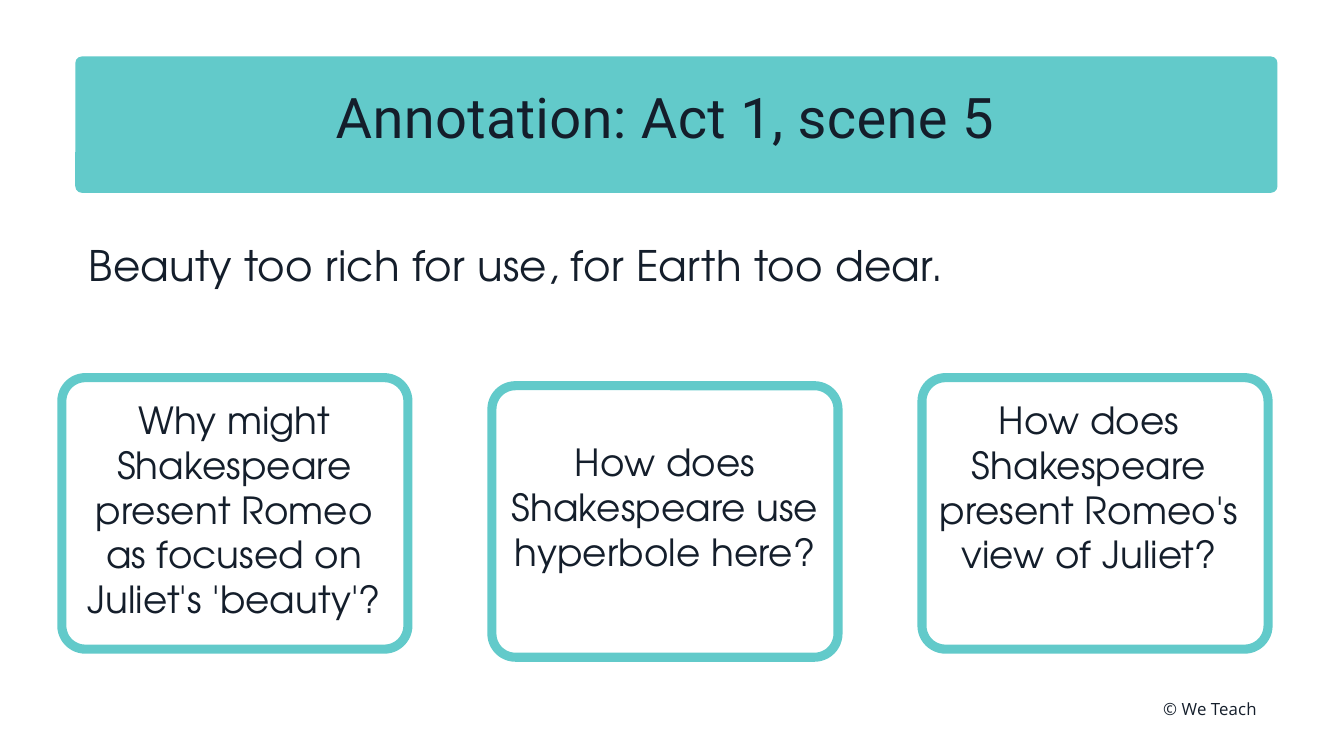
from pptx import Presentation
from pptx.dml.color import RGBColor
from pptx.enum.shapes import MSO_SHAPE as Shape
from pptx.enum.text import MSO_ANCHOR as Anchor, PP_ALIGN as Align
from pptx.util import Inches, Pt

COLORS = {"teal": "62CACA", "ink": "141E2B"}
BODY_FONT = "TeX Gyre Adventor"

CARD_LEFT, CARD_PITCH = 0.92, 6.4
CARD_WIDTH, CARD_HEIGHT = 5.15, 4.04
QUESTION_WIDTH = 4.66

# Question, card top, text left offset, text top, text height
QUESTIONS = [
    ("Why might Shakespeare present Romeo as focused on Juliet's 'beauty'?",
     5.62, 0.24, 5.91, 3.28),
    ("How does Shakespeare use hyperbole here?", 5.74, 0.25, 6.54, 1.97),
    ("How does Shakespeare present Romeo's view of Juliet?",
     5.62, 0.16, 5.91, 2.62),
]


def color(name):
    return RGBColor.from_string(COLORS[name])


def add_rounded_box(slide, left, top, width, height, radius):
    shape = slide.shapes.add_shape(
        Shape.ROUNDED_RECTANGLE,
        Inches(left), Inches(top), Inches(width), Inches(height))
    shape.adjustments[0] = radius / min(width, height)
    shape.shadow.inherit = False
    return shape


def add_banner(slide):
    banner = add_rounded_box(slide, 1.12, 0.84, 17.89, 2.03, 0.1)
    banner.fill.solid()
    banner.fill.fore_color.rgb = color("teal")
    banner.line.fill.background()


def add_card(slide, left, top):
    card = add_rounded_box(slide, left, top, CARD_WIDTH, CARD_HEIGHT, 0.35)
    card.fill.background()
    card.line.color.rgb = color("teal")
    card.line.width = Pt(9.75)


def add_text(slide, text, left, top, width, height, size, font=BODY_FONT,
             align=Align.LEFT, tracking=0.2):
    box = slide.shapes.add_textbox(
        Inches(left), Inches(top), Inches(width), Inches(height))
    frame = box.text_frame
    frame.word_wrap = True
    frame.vertical_anchor = Anchor.TOP
    frame.margin_left = frame.margin_right = 0
    frame.margin_top = frame.margin_bottom = 0
    paragraph = frame.paragraphs[0]
    paragraph.alignment = align
    paragraph.line_spacing = Pt(size * 1.2)
    paragraph.font.name = font
    paragraph.font.size = Pt(size)
    paragraph.font.color.rgb = color("ink")
    run = paragraph.add_run()
    run.text = text
    # Letter spacing, in hundredths of a point
    run._r.get_or_add_rPr().set("spc", str(round(tracking * 100)))


def main():
    presentation = Presentation()
    presentation.slide_width = Inches(20)
    presentation.slide_height = Inches(11.25)
    slide = presentation.slides.add_slide(presentation.slide_layouts[6])

    # Title banner
    add_banner(slide)
    add_text(slide, "Annotation: Act 1, scene 5 ", 3.4, 1.23, 13.21, 1.12,
             60, "Roboto", Align.CENTER, 0.4)

    # Quotation
    add_text(slide, "Beauty too rich for use, for Earth too dear.",
             1.32, 3.57, 17.7, 2.26, 45, tracking=0.3)

    # Question cards
    for index, (question, card_top, offset, top, height) in enumerate(QUESTIONS):
        left = CARD_LEFT + index * CARD_PITCH
        add_card(slide, left, card_top)
        add_text(slide, question, left + offset, top, QUESTION_WIDTH, height,
                 40, align=Align.CENTER)

    # Copyright line
    add_text(slide, "© We Teach", 17.31, 10.4, 1.7, 0.34, 18, "Open Sans",
             tracking=0.1)

    presentation.save("out.pptx")


if __name__ == "__main__":
    main()
